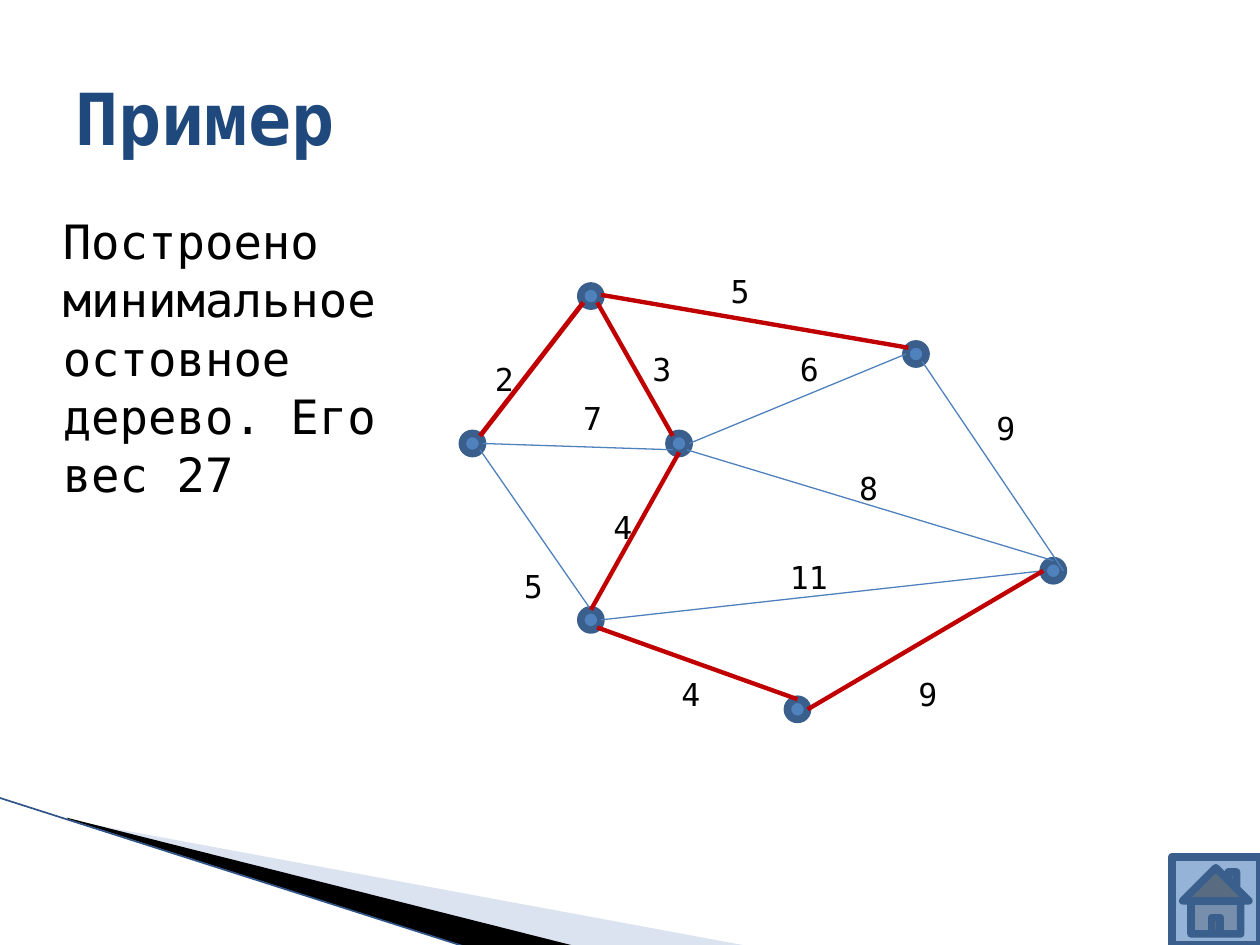
"""Build a slide showing a weighted graph and its minimum spanning tree."""
from dataclasses import dataclass

from lxml.etree import SubElement
from pptx import Presentation
from pptx.dml.color import RGBColor
from pptx.enum.shapes import MSO_CONNECTOR, MSO_SHAPE
from pptx.enum.text import MSO_ANCHOR as Anchor, MSO_AUTO_SIZE as AutoSize
from pptx.oxml.ns import qn
from pptx.util import Inches, Pt

FONT = "DejaVu Sans Mono"
BLUE, DARK_BLUE, RED, BLACK = "4F81BD", "3A5F8C", "C00000", "000000"
NODE_SIZE = 0.16
Point = tuple[float, float]


@dataclass
class Edge:
    start: Point
    end: Point
    weight: str
    label: Point
    tree_width: float = 0


@dataclass
class Wedge:
    points: list[Point]
    color: str
    opacity: int = 100


NODES = [(3.67, 3.44), (4.61, 4.84), (4.61, 2.27), (5.31, 3.44),
         (6.25, 5.55), (7.19, 2.73), (8.28, 4.45)]
EDGES = [
    Edge((3.81, 3.46), (4.63, 2.4), "2", (3.83, 2.81), 2.75),
    Edge((3.83, 3.52), (5.34, 3.57), "7", (4.53, 3.12)),
    Edge((3.81, 3.57), (4.69, 4.84), "5", (4.06, 4.45)),
    Edge((5.47, 3.52), (7.19, 2.81), "6", (6.25, 2.73)),
    Edge((6.41, 5.63), (8.28, 4.53), "9", (7.19, 5.31), 2.5),
    Edge((5.45, 3.57), (8.36, 4.45), "8", (6.72, 3.67)),
    Edge((7.32, 2.87), (8.44, 4.53), "9", (7.81, 3.2)),
    Edge((4.77, 4.92), (8.28, 4.53), "11", (6.17, 4.38)),
    Edge((4.74, 4.98), (6.33, 5.55), "4", (5.31, 5.31), 2.5),
    Edge((4.74, 2.4), (5.34, 3.46), "3", (5.08, 2.73), 2.5),
    Edge((5.39, 3.59), (4.69, 4.84), "4", (4.77, 3.98), 2.5),
    Edge((4.77, 2.34), (7.21, 2.76), "5", (5.7, 2.11), 2.5),
]
WEDGES = [
    Wedge([(0.55, 6.51), (5.95, 7.51), (4.56, 7.51), (0.55, 6.5)], "A7B9DB", 40),
    Wedge([(0.53, 6.49), (4.57, 7.51), (3.72, 7.52), (0.54, 6.5)], BLACK),
]


def rgb(color: str) -> RGBColor:
    return RGBColor.from_string(color)


def add_wedge(slide, wedge: Wedge) -> None:
    first, *rest = [(Inches(x), Inches(y)) for x, y in wedge.points]
    builder = slide.shapes.build_freeform(*first)
    builder.add_line_segments(rest)
    shape = builder.convert_to_shape()
    shape.shadow.inherit = False
    shape.fill.solid()
    shape.fill.fore_color.rgb = rgb(wedge.color)
    shape.line.fill.background()
    if wedge.opacity < 100:
        color = shape.fill._xPr.find(".//" + qn("a:srgbClr"))
        SubElement(color, qn("a:alpha")).set("val", str(wedge.opacity * 1000))


def add_line(slide, start: Point, end: Point, color: str, width: float) -> None:
    ends = [Inches(value) for value in (*start, *end)]
    connector = slide.shapes.add_connector(MSO_CONNECTOR.STRAIGHT, *ends)
    connector.line.color.rgb = rgb(color)
    connector.line.width = Pt(width)
    SubElement(connector._element.spPr, qn("a:effectLst"))


def add_outlined(slide, kind: MSO_SHAPE, corner: Point, size: float, fill: str) -> None:
    box = [Inches(value) for value in (*corner, size, size)]
    shape = slide.shapes.add_shape(kind, *box)
    shape.shadow.inherit = False
    shape.fill.solid()
    shape.fill.fore_color.rgb = rgb(fill)
    shape.line.color.rgb = rgb(DARK_BLUE)
    shape.line.width = Pt(4.33)


def add_text(slide, text: str, box: tuple, *, size: float, color: str = BLACK,
             bold: bool = False, anchor: Anchor = Anchor.TOP, wrap: bool = True,
             line_spacing: float = 1.0) -> None:
    frame = slide.shapes.add_textbox(*[Inches(value) for value in box]).text_frame
    frame.word_wrap = wrap
    frame.auto_size = AutoSize.NONE if wrap else AutoSize.SHAPE_TO_FIT_TEXT
    frame.vertical_anchor = anchor
    paragraph = frame.paragraphs[0]
    paragraph.line_spacing = line_spacing
    run = paragraph.add_run()
    run.text = text
    run.font.name = FONT
    run.font.size = Pt(size)
    run.font.bold = bold
    run.font.color.rgb = rgb(color)


def main() -> None:
    presentation = Presentation()
    presentation.slide_width, presentation.slide_height = Inches(10), Inches(7.5)
    slide = presentation.slides.add_slide(presentation.slide_layouts[6])

    for wedge in WEDGES:
        add_wedge(slide, wedge)
    add_line(slide, (-0.01, 6.33), (3.71, 7.52), "2F5487", 0.95)
    add_text(slide, "Пример", (0.5, 0.3, 9, 1.25), size=41, color="1F497D",
             bold=True, anchor=Anchor.MIDDLE)

    for node in NODES:
        add_outlined(slide, MSO_SHAPE.OVAL, node, NODE_SIZE, BLUE)
    for edge in EDGES:
        add_line(slide, edge.start, edge.end, BLUE, 0.75)
    for edge in EDGES:
        width = 0.2 + 0.16 * len(edge.weight)
        add_text(slide, edge.weight, (*edge.label, width, 0.4), size=18, wrap=False)
        if edge.tree_width:
            add_line(slide, edge.start, edge.end, RED, edge.tree_width)

    add_text(slide, "Построено минимальное остовное дерево. Его вес 27",
             (0.4, 1.62, 3.04, 5.1), size=27, line_spacing=1.03)
    add_outlined(slide, MSO_SHAPE.ACTION_BUTTON_HOME, (9.3, 6.8), 0.7, "95B3D7")
    presentation.save("out.pptx")


if __name__ == "__main__":
    main()
